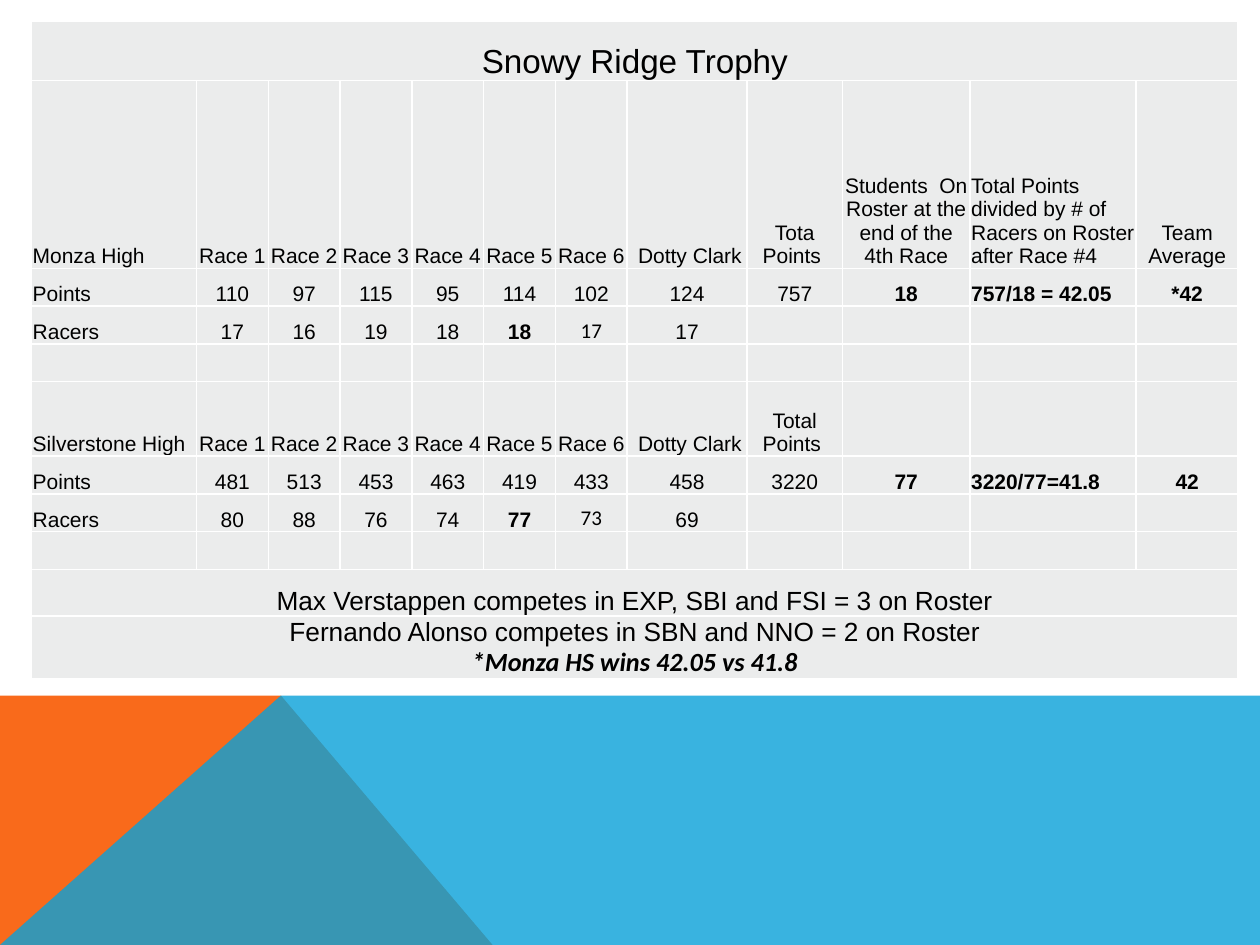
import pptx
import pptx.util
import pptx.dml.color
import pptx.enum.text
import pptx.oxml.ns
from lxml import etree

Inches, Pt = pptx.util.Inches, pptx.util.Pt
RGBColor = pptx.dml.color.RGBColor
PP_ALIGN, MSO_ANCHOR = pptx.enum.text.PP_ALIGN, pptx.enum.text.MSO_ANCHOR
qn = pptx.oxml.ns.qn

BLACK = RGBColor(0x00, 0x00, 0x00)
WHITE = RGBColor(0xFF, 0xFF, 0xFF)
CELL_GREY = RGBColor(0xEB, 0xEC, 0xEC)
ORANGE = RGBColor(0xF9, 0x6A, 0x1B)
BLUE = RGBColor(0x08, 0xA1, 0xD9)

RACES = [f"Race {number}" for number in range(1, 7)] + [" Dotty Clark"]
TROPHY = "Snowy Ridge Trophy"
ROSTER_NOTE = "Max Verstappen competes in EXP, SBI and FSI = 3 on Roster"
CLOSING_NOTES = [
    ("Fernando Alonso competes in SBN and NNO = 2 on Roster", {}),
    ("*Monza HS wins 42.05 vs 41.8", {"font": "Calibri", "bold": True, "italic": True}),
]
SCORES = [
    ["Monza High", *RACES, "Tota Points ",
     "Students  On Roster at the end of the 4th Race",
     "Total Points divided by # of Racers on Roster after Race #4", "Team Average"],
    ["Points", 110, 97, 115, 95, 114, 102, 124, 757, 18, "757/18 = 42.05", "*42"],
    ["Racers", 17, 16, 19, 18, 18, 17, 17],
    [],
    ["Silverstone High", *RACES, "Total Points "],
    ["Points", 481, 513, 453, 463, 419, 433, 458, 3220, 77, "3220/77=41.8", 42],
    ["Racers", 80, 88, 76, 74, 77, 73, 69],
    [],
]
COLUMN_WIDTHS = [1.31] + [0.57] * 6 + [0.95, 0.76, 1.01, 1.32, 0.81]
ROW_HEIGHTS = [0.47, 1.49, 0.3, 0.3, 0.3, 0.59, 0.3, 0.3, 0.3, 0.37, 0.49]
RACE_5, RACE_6, ROSTER, DIVISION = 5, 6, 9, 10
LEFT_COLUMNS = (0, DIVISION)

BANDS = [
    ([(0, 7.5), (0, 5.52), (2.23, 5.52), (3.91, 7.5)], ORANGE, 100),
    ([(0, 7.5), (2.23, 5.52), (10, 5.52), (10, 7.5)], BLUE, 80),
]


def add_band(slide, points, color, opacity):
    corners = [(Inches(x), Inches(y)) for x, y in points]
    builder = slide.shapes.build_freeform(*corners[0], scale=1.0)
    builder.add_line_segments(corners[1:], close=True)
    band = builder.convert_to_shape()
    band.shadow.inherit = False
    band.line.fill.background()
    band.fill.solid()
    band.fill.fore_color.rgb = color
    if opacity < 100:
        srgb = band.fill._xPr.find(qn("a:solidFill")).find(qn("a:srgbClr"))
        etree.SubElement(srgb, qn("a:alpha"), val=str(opacity * 1000))


def style_cell(cell):
    """Set insets, bottom anchor, white borders and grey fill."""
    cell.margin_left = cell.margin_right = cell.margin_top = Inches(0.01)
    cell.margin_bottom = 0
    cell.vertical_anchor = MSO_ANCHOR.BOTTOM
    properties = cell._tc.get_or_add_tcPr()
    for side in ("lnL", "lnR", "lnT", "lnB"):
        border = etree.SubElement(properties, qn(f"a:{side}"), w=str(Pt(1)))
        fill = etree.SubElement(border, qn("a:solidFill"))
        etree.SubElement(fill, qn("a:srgbClr"), val=str(WHITE))
    cell.fill.solid()
    cell.fill.fore_color.rgb = CELL_GREY


def write(paragraph, text, *, size=12, font="Arial", bold=False, italic=False,
          align=PP_ALIGN.CENTER):
    paragraph.alignment = align
    if not text:
        etree.SubElement(paragraph._p, qn("a:endParaRPr"), sz=str(size * 100))
        return
    run = paragraph.add_run()
    run.text = text
    run.font.size = Pt(size)
    run.font.name = font
    run.font.bold = bold
    run.font.italic = italic
    run.font.color.rgb = BLACK


def add_score_table(slide):
    frame = slide.shapes.add_table(
        len(ROW_HEIGHTS), len(COLUMN_WIDTHS), Inches(0.25), Inches(0.17),
        Inches(sum(COLUMN_WIDTHS)), Inches(sum(ROW_HEIGHTS)))
    table = frame.table
    table.first_row = table.horz_banding = False
    for column, width in zip(table.columns, COLUMN_WIDTHS):
        column.width = Inches(width)
    for row, height in zip(table.rows, ROW_HEIGHTS):
        row.height = Inches(height)
    for cell in table.iter_cells():
        style_cell(cell)

    last_row, last_column = len(ROW_HEIGHTS) - 1, len(COLUMN_WIDTHS) - 1
    full_rows = {
        0: [(TROPHY, {"size": 19})],
        last_row - 1: [(ROSTER_NOTE, {"size": 15})],
        last_row: [(text, {"size": 15, **style}) for text, style in CLOSING_NOTES],
    }
    for r, lines in full_rows.items():
        merged = table.cell(r, 0)
        merged.merge(table.cell(r, last_column))
        for i, (text, style) in enumerate(lines):
            body = merged.text_frame
            paragraph = body.add_paragraph() if i else body.paragraphs[0]
            write(paragraph, text, **style)

    for r, values in enumerate(SCORES, start=1):
        label = values[0] if values else ""
        for c in range(len(COLUMN_WIDTHS)):
            text = str(values[c]) if c < len(values) else ""
            racers = label == "Racers"
            write(table.cell(r, c).text_frame.paragraphs[0], text,
                  font="Calibri" if racers and c == RACE_6 else "Arial",
                  bold=(racers and c == RACE_5) or (label == "Points" and c >= ROSTER),
                  align=PP_ALIGN.LEFT if c in LEFT_COLUMNS else PP_ALIGN.CENTER)


def main():
    deck = pptx.Presentation()
    deck.slide_width, deck.slide_height = Inches(10), Inches(7.5)
    slide = deck.slides.add_slide(deck.slide_layouts[6])
    for points, color, opacity in BANDS:
        add_band(slide, points, color, opacity)
    add_score_table(slide)
    deck.save("out.pptx")


if __name__ == "__main__":
    main()
